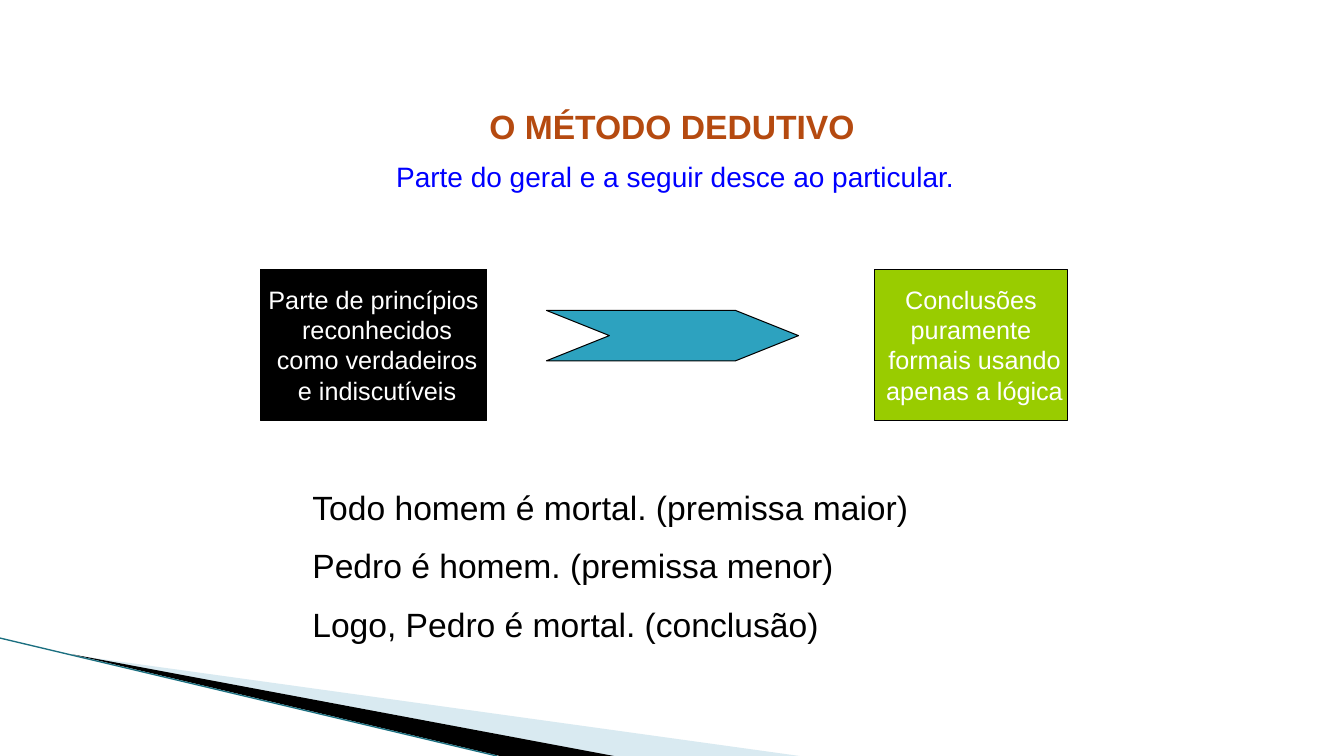
from lxml import etree
from pptx import Presentation
from pptx.dml.color import RGBColor
from pptx.enum.shapes import MSO_CONNECTOR, MSO_SHAPE
from pptx.enum.text import MSO_ANCHOR, PP_ALIGN
from pptx.oxml.ns import qn
from pptx.util import Inches, Pt

CENTER, LEFT = PP_ALIGN.CENTER, PP_ALIGN.LEFT
TOP, MIDDLE = MSO_ANCHOR.TOP, MSO_ANCHOR.MIDDLE
WIDTH, HEIGHT = 13.33, 7.5
FONT = "Arial"

# Content
TITLE = "O MÉTODO DEDUTIVO"
SUBTITLE = "Parte do geral e a seguir desce ao particular."
SYLLOGISM = [
    "Todo homem é mortal. (premissa maior)",
    "Pedro é homem. (premissa menor)",
    "Logo, Pedro é mortal. (conclusão)",
]
# Each box: left, width, fill, lines as (text, left indent)
BOX_TOP, BOX_HEIGHT = 2.67, 1.5
BOXES = [
    (2.58, 2.25, "000000", [("Parte de princípios", 0), ("reconhecidos", 0.07),
                            ("como verdadeiros", 0.07), ("e indiscutíveis", 0.07)]),
    (8.67, 1.92, "99CC00", [("Conclusões", 0), ("puramente", 0),
                            ("formais usando", 0.07), ("apenas a lógica", 0.07)]),
]
# Corner wedges: points, fill, opacity in percent
WEDGES = [
    ([(0.73, 6.5), (7.93, HEIGHT), (6.08, HEIGHT)], "A0CBDC", 40),
    ([(0.71, 6.49), (6.09, HEIGHT), (4.96, HEIGHT)], "000000", 100),
]


def color(value):
    return RGBColor.from_string(value)


def paint(shape, fill, line=None):
    shape.shadow.inherit = False
    shape.fill.solid()
    shape.fill.fore_color.rgb = color(fill)
    if line:
        shape.line.color.rgb = color(line)
        shape.line.width = Pt(0.75)
    else:
        shape.line.fill.background()


def write(shape, lines, size, ink, align=LEFT, anchor=TOP, inset=0.1,
          gap=0, bold=False):
    frame = shape.text_frame
    frame.word_wrap = True
    frame.vertical_anchor = anchor
    frame.margin_left = frame.margin_right = Inches(inset)
    frame.margin_top = frame.margin_bottom = Inches(0.05)
    for index, (text, indent) in enumerate(lines):
        para = frame.add_paragraph() if index else frame.paragraphs[0]
        para.text = text
        para.alignment = align
        para.space_before = Pt(gap if index else 0)
        if indent:
            para._p.get_or_add_pPr().set("marL", str(Inches(indent)))
        para.font.name, para.font.size = FONT, Pt(size)
        para.font.bold = bold
        para.font.color.rgb = color(ink)


def place(shape, left, top, width, height):
    shape.left, shape.top = Inches(left), Inches(top)
    shape.width, shape.height = Inches(width), Inches(height)


deck = Presentation()
deck.slide_width, deck.slide_height = Inches(WIDTH), Inches(HEIGHT)
page = deck.slides.add_slide(deck.slide_layouts[5])
shapes = page.shapes

# Corner decoration
for points, fill, opacity in WEDGES:
    corners = [(Inches(x), Inches(y)) for x, y in points]
    builder = shapes.build_freeform(*corners[0])
    builder.add_line_segments(corners[1:], close=True)
    wedge = builder.convert_to_shape()
    paint(wedge, fill)
    if opacity < 100:
        tint = wedge._element.spPr.find(qn("a:solidFill"))[0]
        etree.SubElement(tint, qn("a:alpha")).set("val", str(opacity * 1000))

edge = shapes.add_connector(MSO_CONNECTOR.STRAIGHT, Inches(0), Inches(6.33),
                            Inches(4.93), Inches(HEIGHT))
edge.line.color.rgb = color("1B6F80")
edge.line.width = Pt(0.95)
etree.SubElement(edge._element.spPr, qn("a:effectLst"))

# Title and subtitle
place(shapes.title, 3.99, 1, 5.35, 0.5)
write(shapes.title, [(TITLE, 0)], 24, "B54A10", CENTER, bold=True)
subtitle = shapes.add_textbox(Inches(3.83), Inches(1.53), Inches(6.25), Inches(0.43))
write(subtitle, [(SUBTITLE, 0)], 20, "0000FF")

# Premises, arrow, conclusions
for left, width, fill, lines in BOXES:
    box = shapes.add_shape(MSO_SHAPE.RECTANGLE, Inches(left), Inches(BOX_TOP),
                           Inches(width), Inches(BOX_HEIGHT))
    paint(box, fill, "000000")
    write(box, lines, 18, "FFFFFF", CENTER, MIDDLE, inset=0)

arrow = shapes.add_shape(MSO_SHAPE.CHEVRON, Inches(5.42), Inches(3.08),
                         Inches(2.5), Inches(0.5))
arrow.adjustments[0] = 1.25
paint(arrow, "2DA2BF", "000000")

# Syllogism
example = shapes.add_textbox(Inches(3), Inches(4.78), Inches(7.83), Inches(1.72))
write(example, [(text, 0) for text in SYLLOGISM], 24, "000000", gap=13)

deck.save("out.pptx")
